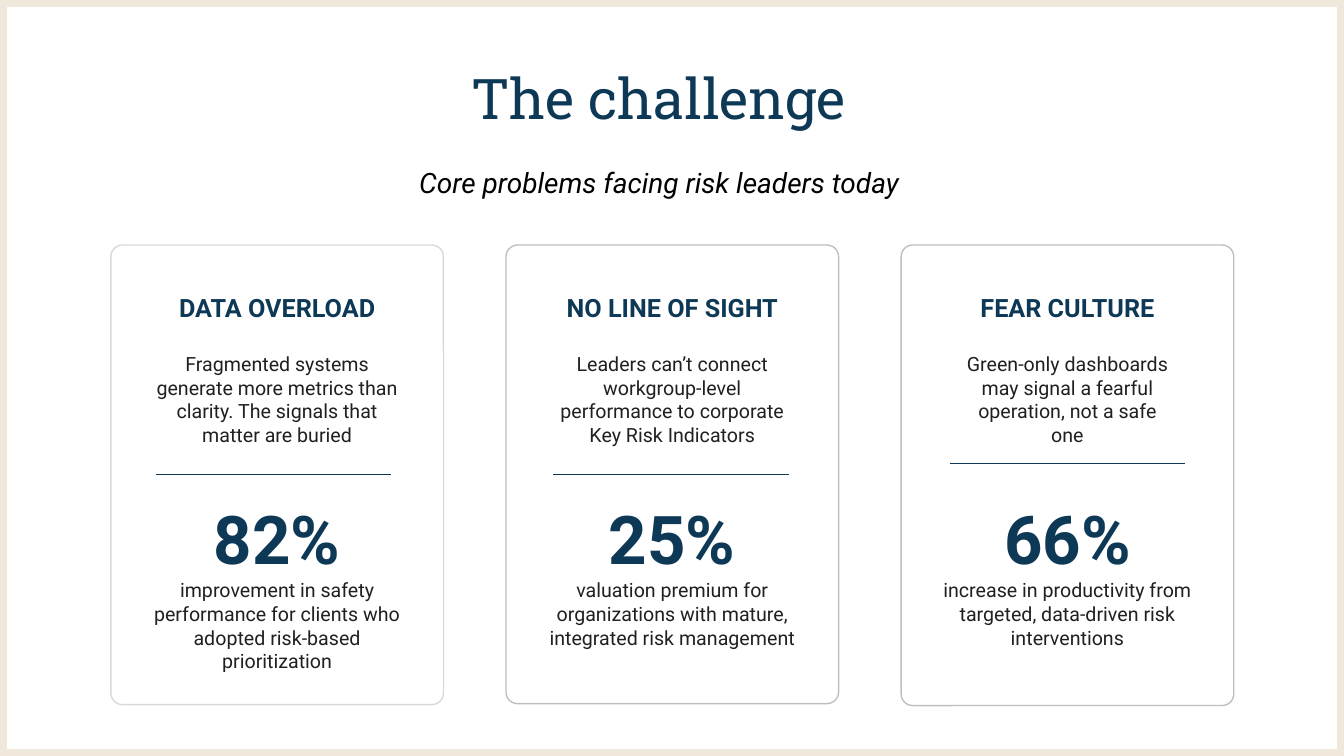
from dataclasses import dataclass
from typing import Optional

from lxml.etree import SubElement
from pptx import Presentation
from pptx.dml.color import RGBColor
from pptx.enum.shapes import MSO_CONNECTOR, MSO_SHAPE
from pptx.enum.text import MSO_ANCHOR, PP_ALIGN
from pptx.oxml.ns import qn
from pptx.slide import Slide
from pptx.text.text import TextFrame
from pptx.util import Pt

NAVY = "0E3956"
INK = "221F1F"
BLACK = "000000"
SAND = "F0E8DB"

SLIDE_WIDTH, SLIDE_HEIGHT = 960, 540
CARD_LEFT, CARD_TOP, CARD_WIDTH, CARD_PITCH = 79.2, 175, 237.6, 282.24
TEXT_WIDTH = 200
PROBLEM_TOP, RESULT_TOP = 205.2, 352


@dataclass(frozen=True)
class Card:
    heading: str
    problem: str
    figure: str
    result: str
    height: float
    border: str
    rule_left: float
    rule_top: float = 339.1
    problem_width: float = TEXT_WIDTH


CARDS = [
    Card("DATA OVERLOAD",
         "Fragmented systems generate more metrics than clarity. The signals that\vmatter are buried",
         "82%",
         "improvement in safety performance for clients who adopted risk-based prioritization",
         328.3, "D9D9D9", 111.6),
    Card("NO LINE OF SIGHT",
         "Leaders can’t connect workgroup-level\vperformance to corporate\vKey Risk Indicators",
         "25%",
         "valuation premium for organizations with mature, integrated risk management",
         327.6, "BFBFBF", 395.3),
    Card("FEAR CULTURE",
         "Green-only dashboards may signal a fearful operation, not a safe one",
         "66%",
         "increase in productivity from targeted, data-driven risk interventions",
         329, "BFBFBF", 678.5, rule_top=331.3, problem_width=167),
]


def color(value: str) -> RGBColor:
    return RGBColor.from_string(value)


def write(frame: TextFrame, text: str, *, size: float, fill: str = INK,
          font: str = "Roboto", bold: bool = False, italic: bool = False,
          align: PP_ALIGN = PP_ALIGN.CENTER, space_before: float = 0,
          line_spacing: Optional[float] = None) -> None:
    paragraph = frame.paragraphs[0] if not frame.text else frame.add_paragraph()
    paragraph.text = text
    paragraph.alignment = align
    paragraph.space_before = Pt(space_before)
    if line_spacing:
        paragraph.line_spacing = line_spacing
    for run in paragraph.runs:
        run.font.name = font
        run.font.size = Pt(size)
        run.font.bold = bold
        run.font.italic = italic
        run.font.color.rgb = color(fill)
    for line_break in paragraph._p.findall(qn("a:br")):
        SubElement(line_break, qn("a:rPr")).set("sz", str(int(size * 100)))


def add_text_frame(slide: Slide, left: float, top: float, width: float,
                   height: float, wrap: bool = True) -> TextFrame:
    frame = slide.shapes.add_textbox(Pt(left), Pt(top), Pt(width), Pt(height)).text_frame
    frame.word_wrap = wrap
    return frame


def add_outline(slide: Slide, kind: MSO_SHAPE, left: float, top: float, width: float,
                height: float, line: str, weight: float, radius: Optional[float] = None) -> None:
    shape = slide.shapes.add_shape(kind, Pt(left), Pt(top), Pt(width), Pt(height))
    shape.shadow.inherit = False
    shape.fill.background()
    shape.line.color.rgb = color(line)
    shape.line.width = Pt(weight)
    if radius is not None:
        shape.adjustments[0] = radius


def add_rule(slide: Slide, left: float, top: float, width: float) -> None:
    rule = slide.shapes.add_connector(
        MSO_CONNECTOR.STRAIGHT, Pt(left), Pt(top), Pt(left + width), Pt(top))
    rule.line.color.rgb = color(NAVY)
    rule.line.width = Pt(0.5)
    SubElement(rule._element.spPr, qn("a:effectLst"))


def add_card(slide: Slide, card: Card, left: float) -> None:
    add_outline(slide, MSO_SHAPE.ROUNDED_RECTANGLE, left, CARD_TOP, CARD_WIDTH,
                card.height, card.border, 1, radius=0.035)
    center = left + CARD_WIDTH / 2

    problem = add_text_frame(slide, center - card.problem_width / 2, PROBLEM_TOP,
                             card.problem_width, 118.8)
    write(problem, card.heading, size=18, fill=NAVY, bold=True)
    write(problem, card.problem, size=14, space_before=21)

    result = add_text_frame(slide, center - TEXT_WIDTH / 2, RESULT_TOP, TEXT_WIDTH, 133)
    write(result, card.figure, size=48, fill=NAVY, bold=True)
    write(result, card.result, size=14)

    add_rule(slide, card.rule_left, card.rule_top, 168)


def add_title(slide: Slide) -> None:
    title = slide.shapes.title
    title.left, title.top, title.width, title.height = Pt(79.9), Pt(15.1), Pt(781.2), Pt(115.2)
    title.text_frame.word_wrap = True
    title.text_frame.vertical_anchor = MSO_ANCHOR.MIDDLE
    write(title.text_frame, "The challenge", size=40, fill=NAVY,
          font="Roboto Slab", line_spacing=0.9)


def main() -> None:
    presentation = Presentation()
    presentation.slide_width = Pt(SLIDE_WIDTH)
    presentation.slide_height = Pt(SLIDE_HEIGHT)
    slide = presentation.slides.add_slide(presentation.slide_layouts[5])

    add_outline(slide, MSO_SHAPE.RECTANGLE, 0, 0, SLIDE_WIDTH, SLIDE_HEIGHT, SAND, 10)
    add_title(slide)
    subtitle = add_text_frame(slide, 292.3, 114.5, 358.6, 31.7, wrap=False)
    write(subtitle, "Core problems facing risk leaders today", size=20, fill=BLACK,
          italic=True, align=PP_ALIGN.LEFT)
    for index, card in enumerate(CARDS):
        add_card(slide, card, CARD_LEFT + index * CARD_PITCH)

    presentation.save("out.pptx")


if __name__ == "__main__":
    main()
